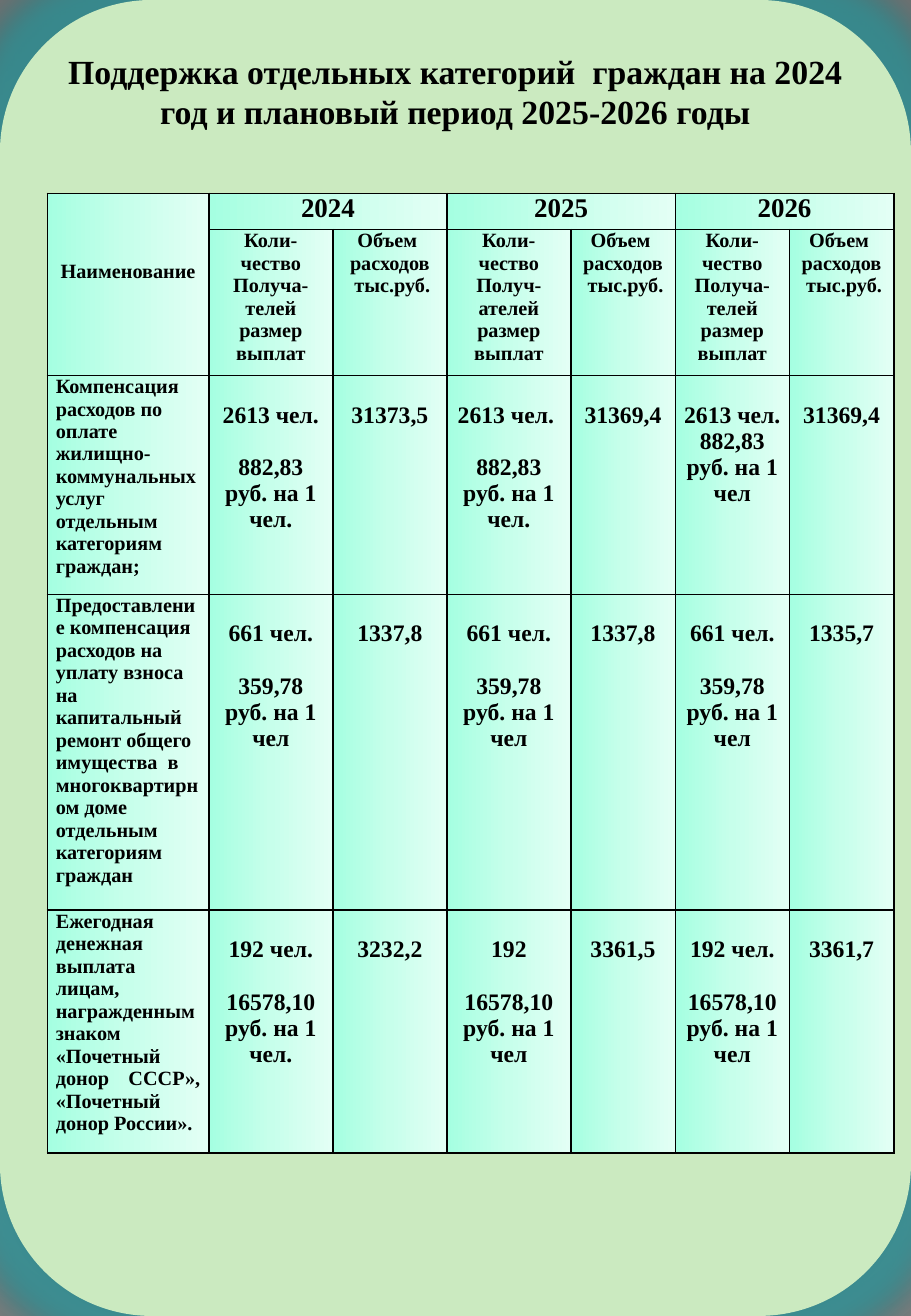
from lxml import etree
from pptx import Presentation
from pptx.dml.color import RGBColor
from pptx.enum.shapes import MSO_SHAPE
from pptx.enum.text import MSO_ANCHOR, PP_ALIGN
from pptx.oxml import parse_xml
from pptx.oxml.ns import nsdecls
from pptx.util import Inches, Pt

ROUNDED = MSO_SHAPE.ROUNDED_RECTANGLE
TOP = MSO_ANCHOR.TOP
LEFT, CENTER, JUSTIFY = PP_ALIGN.LEFT, PP_ALIGN.CENTER, PP_ALIGN.JUSTIFY

WIDTH, HEIGHT = 7.5, 10.83
FONT = "Times New Roman"
COLORS = {"text": "000000", "panel": "CBEAC0", "glow": "2F9A9F", "border": "000000"}
PAGE_STOPS = [(0, "FFFFFF"), (25, "FFFFFF"), (100, "707070")]
CELL_STOPS = [(0, "A5FFE1"), (50, "C7FFEB"), (100, "E3FFF5")]
PAGE_DIRECTION = ('<a:path path="circle"><a:fillToRect l="10000" t="110000" '
                  'r="10000" b="100000"/></a:path>')
CELL_DIRECTION = '<a:lin ang="0" scaled="0"/>'

TITLE = "Поддержка отдельных категорий  граждан на 2024 год и плановый период 2025-2026 годы"
COLUMN_WIDTHS = [1.33, 1.02, 0.94, 1.02, 0.86, 0.94, 0.86]
ROW_HEIGHTS = [0.3, 1.2, 1.8, 2.6, 2]
SIDE_MARGIN = 0.07
NAME_DROP = 0.55
VALUE_DROP = 0.22
LINE_GAP = 15.5

YEARS = [("2024", "Получа-телей"), ("2025", "Получ-ателей"), ("2026", "Получа-телей")]
VOLUME_HEADER = ["Объем ", "расходов", " тыс.руб."]
# Each year: recipients, payment, gap between them, total cost
SUPPORT = [
    ("Компенсация расходов по оплате жилищно-коммунальных услуг отдельным категориям граждан;",
     LEFT,
     [("2613 чел.", "882,83 руб. на 1 чел.", LINE_GAP, "31373,5"),
      ("2613 чел. ", "882,83 руб. на 1 чел.", LINE_GAP, "31369,4"),
      ("2613 чел.", "882,83 руб. на 1 чел", 0, "31369,4")]),
    ("Предоставление компенсация расходов на уплату взноса на капитальный ремонт общего "
     "имущества  в многоквартирном доме отдельным категориям граждан",
     LEFT,
     [("661 чел.", "359,78 руб. на 1 чел", LINE_GAP, "1337,8"),
      ("661 чел.", "359,78 руб. на 1 чел", LINE_GAP, "1337,8"),
      ("661 чел.", "359,78 руб. на 1 чел", LINE_GAP, "1335,7")]),
    ("Ежегодная денежная выплата лицам, награжденным знаком «Почетный донор СССР», "
     "«Почетный донор России».",
     JUSTIFY,
     [("192 чел.", "16578,10 руб. на 1 чел.", LINE_GAP, "3232,2"),
      ("192", "16578,10 руб. на 1 чел", LINE_GAP, "3361,5"),
      ("192 чел.", "16578,10 руб. на 1 чел", LINE_GAP, "3361,7")]),
]


def gradient(stops, direction):
    """Return a gradient fill element."""
    marks = "".join(f'<a:gs pos="{position * 1000}"><a:srgbClr val="{color}"/></a:gs>'
                    for position, color in stops)
    return parse_xml(f'<a:gradFill {nsdecls("a")} rotWithShape="1"><a:gsLst>{marks}</a:gsLst>'
                     f'{direction}</a:gradFill>')


def write(text_frame, lines, size, align=CENTER, gap=0):
    """Fill a frame with bold paragraphs, gap points apart."""
    text_frame.word_wrap = True
    for index, line in enumerate(lines):
        paragraph = text_frame.add_paragraph() if index else text_frame.paragraphs[0]
        paragraph.alignment = align
        if index and gap:
            paragraph.space_before = Pt(gap)
        run = paragraph.add_run()
        run.text = line
        for name, value in {"name": FONT, "size": Pt(size), "bold": True}.items():
            setattr(run.font, name, value)
        run.font.color.rgb = RGBColor.from_string(COLORS["text"])


def paint_background(slide):
    fill = slide.background.fill
    fill.gradient()
    properties = slide.element.cSld.bg.bgPr
    properties.replace(properties[0], gradient(PAGE_STOPS, PAGE_DIRECTION))


def add_title_panel(slide, left, top, width, height):
    panel = slide.shapes.add_shape(ROUNDED, Inches(left), Inches(top),
                                   Inches(width), Inches(height))
    panel.fill.solid()
    panel.fill.fore_color.rgb = RGBColor.from_string(COLORS["panel"])
    panel.line.fill.background()
    panel.shadow.inherit = False
    effects = panel.element.spPr.find("{*}effectLst")
    effects.append(parse_xml(
        f'<a:glow {nsdecls("a")} rad="{Pt(36)}"><a:srgbClr val="{COLORS["glow"]}">'
        '<a:alpha val="75000"/></a:srgbClr></a:glow>'))
    effects.append(parse_xml(
        f'<a:outerShdw {nsdecls("a")} blurRad="{Pt(3.5)}" dist="{Pt(2.2)}" dir="5400000" '
        'rotWithShape="0"><a:srgbClr val="000000"><a:alpha val="32000"/></a:srgbClr>'
        '</a:outerShdw>'))
    panel.text_frame.vertical_anchor = TOP
    write(panel.text_frame, [TITLE], 20)


def style_cell(cell):
    for name, value in {"margin_left": SIDE_MARGIN, "margin_right": SIDE_MARGIN,
                        "margin_top": 0, "margin_bottom": 0}.items():
        setattr(cell, name, Inches(value))
    properties = cell._tc.get_or_add_tcPr()
    for side in ("lnL", "lnR", "lnT", "lnB"):
        properties.append(parse_xml(
            f'<a:{side} {nsdecls("a")} w="{Pt(1)}"><a:solidFill>'
            f'<a:srgbClr val="{COLORS["border"]}"/></a:solidFill></a:{side}>'))
    properties.append(gradient(CELL_STOPS, CELL_DIRECTION))


def fill_headers(table):
    name_cell = table.cell(0, 0)
    name_cell.merge(table.cell(1, 0))
    name_cell.margin_top = Inches(NAME_DROP)
    write(name_cell.text_frame, ["Наименование"], 12)
    for index, (year, recipients) in enumerate(YEARS):
        column = 1 + 2 * index
        table.cell(0, column).merge(table.cell(0, column + 1))
        write(table.cell(0, column).text_frame, [year], 16)
        write(table.cell(1, column).text_frame,
              ["Коли-чество", recipients, "размер", "выплат"], 12)
        write(table.cell(1, column + 1).text_frame, VOLUME_HEADER, 12)


def fill_support(table):
    for row, (name, align, years) in enumerate(SUPPORT, start=2):
        write(table.cell(row, 0).text_frame, [name], 12, align)
        for index, (recipients, payment, gap, total) in enumerate(years):
            column = 1 + 2 * index
            for offset, lines in enumerate([[recipients, payment], [total]]):
                cell = table.cell(row, column + offset)
                cell.margin_top = Inches(VALUE_DROP)
                write(cell.text_frame, lines, 14, gap=gap)


def add_support_table(slide, left, top):
    table = slide.shapes.add_table(
        len(ROW_HEIGHTS), len(COLUMN_WIDTHS), Inches(left), Inches(top),
        Inches(sum(COLUMN_WIDTHS)), Inches(sum(ROW_HEIGHTS))).table
    table.first_row = table.horz_banding = False
    for column, width in zip(table.columns, COLUMN_WIDTHS):
        column.width = Inches(width)
    for row, height in zip(table.rows, ROW_HEIGHTS):
        row.height = Inches(height)
    for cell in table.iter_cells():
        style_cell(cell)
    fill_headers(table)
    fill_support(table)


def main():
    presentation = Presentation()
    presentation.slide_width = Inches(WIDTH)
    presentation.slide_height = Inches(HEIGHT)
    slide = presentation.slides.add_slide(presentation.slide_layouts[6])
    paint_background(slide)
    add_title_panel(slide, 0, 0, WIDTH, HEIGHT)
    add_support_table(slide, 0.39, 1.59)
    presentation.save("out.pptx")


if __name__ == "__main__":
    main()
